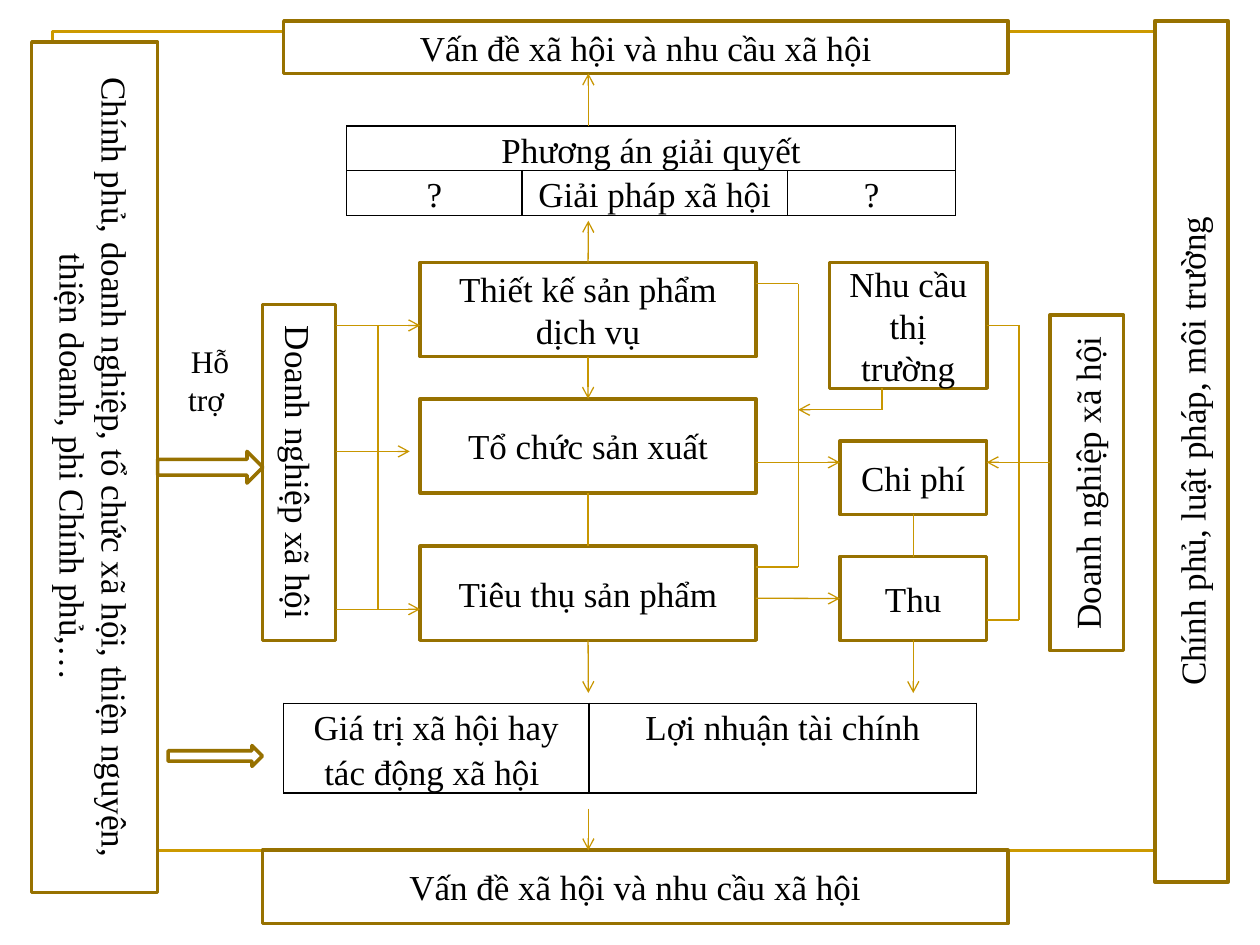
"""Build the slide on how social enterprises turn social needs into value."""
from lxml import etree
from pptx import Presentation
from pptx import util as u
from pptx.dml.color import RGBColor
from pptx.enum import shapes, text
from pptx.oxml.ns import qn

FONT = "Times New Roman"
BLACK, WHITE, BORDER, FLOW, FRAME = "000000", "FFFFFF", "977100", "C89600", "CC9900"
TOP, LEFT, BOTTOM, RIGHT = range(4)
RECTANGLE = shapes.MSO_SHAPE.RECTANGLE
PROCESS = shapes.MSO_SHAPE.FLOWCHART_PROCESS

NEEDS = "Vấn đề xã hội và nhu cầu xã hội"
ENTERPRISE = "Doanh nghiệp xã hội"
SUPPORTERS = ("Chính phủ, doanh nghiệp, tổ chức xã hội, thiện nguyện, "
              "thiện doanh, phi Chính phủ,…")
BOXES = {
    "needs": (NEEDS, (5.72, 0.42, 14.6, 1.06), RECTANGLE, "horz"),
    "design": ("Thiết kế sản phẩm dịch vụ", (8.47, 5.29, 6.77, 1.9), RECTANGLE, "horz"),
    "production": ("Tổ chức sản xuất", (8.47, 8.04, 6.77, 1.9), RECTANGLE, "horz"),
    "sales": ("Tiêu thụ sản phẩm", (8.47, 11.01, 6.77, 1.9), RECTANGLE, "horz"),
    "market": ("Nhu cầu thị trường", (16.72, 5.29, 3.18, 2.54), RECTANGLE, "horz"),
    "cost": ("Chi phí", (16.93, 8.89, 2.96, 1.48), PROCESS, "horz"),
    "revenue": ("Thu", (16.93, 11.22, 2.96, 1.69), PROCESS, "horz"),
    "outcome": (NEEDS, (5.29, 17.14, 15.03, 1.48), PROCESS, "horz"),
    "supporters": (SUPPORTERS, (0.64, 0.85, 2.54, 17.14), RECTANGLE, "vert"),
    "enterprise left": (ENTERPRISE, (5.29, 6.14, 1.48, 6.77), RECTANGLE, "vert"),
    "enterprise right": (ENTERPRISE, (21.17, 6.35, 1.48, 6.77), RECTANGLE, "vert270"),
    "law": ("Chính phủ, luật pháp, môi trường", (23.28, 0.42, 1.48, 17.36),
            RECTANGLE, "vert270"),
}
BLOCK_ARROWS = [(3.18, 9.1, 2.12, 0.64), (3.39, 15.03, 1.9, 0.42)]
TABLES = [
    ((6.99, 2.54), (3.53, 5.36, 3.38), 0.9,
     [("Phương án giải quyết", "", ""), ("?", "Giải pháp xã hội", "?")]),
    ((5.72, 14.18), (6.15, 7.82), 1.81,
     [("Giá trị xã hội hay tác động xã hội ", "Lợi nhuận tài chính")]),
]
ARROWS = [
    ((11.86, 2.54), (11.86, 1.48)),
    (("design", TOP), (11.86, 4.45)),
    (("design", BOTTOM), ("production", TOP)),
    (("sales", BOTTOM), (11.86, 13.97)),
    (("revenue", BOTTOM), (18.41, 13.97)),
    ((11.86, 16.3), (11.86, 17.14)),
    ((6.77, 6.56), (8.47, 6.56)),
    ((6.77, 9.1), (8.26, 9.1)),
    ((6.77, 12.28), (8.47, 12.28)),
    ((15.24, 9.32), (16.93, 9.32)),
    ((15.24, 12.06), ("revenue", LEFT)),
    ((17.78, 8.26), (16.09, 8.26)),
    ((21.17, 9.32), (19.89, 9.32)),
]
LINES = [
    (("production", BOTTOM), ("sales", TOP)),
    (("cost", BOTTOM), ("revenue", TOP)),
    ((7.62, 6.56), (7.62, 12.28)),
    ((15.24, 5.72), (16.09, 5.72)),
    ((16.09, 5.72), (16.09, 11.43)),
    ((16.09, 11.43), (15.24, 11.43)),
    ((17.78, 8.26), (17.78, 7.83)),
    ((19.89, 6.56), (20.54, 6.56)),
    ((20.54, 6.56), (20.54, 12.5)),
    ((20.54, 12.5), (19.89, 12.5)),
]


def color(value):
    return RGBColor.from_string(value)


def cm(values):
    return [u.Cm(value) for value in values]


def write(frame, words, size=20, spacing=None):
    frame.word_wrap = True
    paragraph = frame.paragraphs[0]
    paragraph.text = words
    paragraph.alignment = text.PP_ALIGN.CENTER
    paragraph.line_spacing = spacing
    paragraph.font.name = FONT
    paragraph.font.size = u.Pt(size)
    paragraph.font.color.rgb = color(BLACK)


def set_line(shape, value, width):
    shape.line.color.rgb = color(value)
    shape.line.width = u.Pt(width)


def add_box(slide, kind, place):
    shape = slide.shapes.add_shape(kind, *cm(place))
    shape.shadow.inherit = False
    shape.fill.solid()
    shape.fill.fore_color.rgb = color(WHITE)
    set_line(shape, BORDER, 2)
    return shape


def add_line(slide, boxes, start, end, value=FLOW, width=0.75, arrow=False):
    points = [(0, 0) if isinstance(stop[0], str) else cm(stop) for stop in (start, end)]
    line = slide.shapes.add_connector(shapes.MSO_CONNECTOR.STRAIGHT, *points[0], *points[1])
    for stop, connect in ((start, line.begin_connect), (end, line.end_connect)):
        if isinstance(stop[0], str):
            connect(boxes[stop[0]], stop[1])
    set_line(line, value, width)
    if arrow:
        etree.SubElement(line.line._get_or_add_ln(), qn("a:tailEnd"), type="arrow")
    etree.SubElement(line._element.spPr, qn("a:effectLst"))


def add_borders(cell):
    properties = cell._tc.get_or_add_tcPr()
    for position, side in enumerate(("lnL", "lnR", "lnT", "lnB")):
        border = etree.Element(qn("a:" + side), w=str(u.Pt(1)))
        fill = etree.SubElement(border, qn("a:solidFill"))
        etree.SubElement(fill, qn("a:srgbClr"), val=BLACK)
        properties.insert(position, border)


def add_table(slide, corner, widths, height, rows):
    size = cm((sum(widths), height * len(rows)))
    table = slide.shapes.add_table(len(rows), len(widths), *cm(corner), *size).table
    for column, width in zip(table.columns, widths):
        column.width = u.Cm(width)
    for r, row in enumerate(rows):
        table.rows[r].height = u.Cm(height)
        for c, words in enumerate(row):
            cell = table.cell(r, c)
            cell.margin_left = cell.margin_right = u.Cm(0.18)
            cell.margin_top = cell.margin_bottom = 0
            cell.fill.solid()
            cell.fill.fore_color.rgb = color(WHITE)
            add_borders(cell)
            write(cell.text_frame, words, spacing=1.15)
        if "" in row:
            table.cell(r, 0).merge(table.cell(r, len(row) - 1))


def add_frame(slide):
    builder = slide.shapes.build_freeform(*cm((1.06, 2.33)))
    builder.add_line_segments([cm((1.06, 0.64)), cm((23.92, 0.64))], close=False)
    corner = builder.convert_to_shape()
    corner.shadow.inherit = False
    corner.fill.background()
    set_line(corner, FRAME, 1.5)
    add_line(slide, {}, (1.27, 17.14), (24.13, 17.14), FRAME, 1.5)


def main():
    presentation = Presentation()
    presentation.slide_width, presentation.slide_height = cm((25.4, 19.05))
    slide = presentation.slides.add_slide(presentation.slide_layouts[6])
    add_frame(slide)
    boxes = {}
    for name, (words, place, kind, direction) in BOXES.items():
        boxes[name] = shape = add_box(slide, kind, place)
        shape.text_frame.vertical_anchor = text.MSO_ANCHOR.MIDDLE
        shape.text_frame._txBody.bodyPr.set("vert", direction)
        write(shape.text_frame, words)
    for place in BLOCK_ARROWS:
        add_box(slide, shapes.MSO_SHAPE.RIGHT_ARROW, place)
    for table in TABLES:
        add_table(slide, *table)
    for start, end in ARROWS:
        add_line(slide, boxes, start, end, arrow=True)
    for start, end in LINES:
        add_line(slide, boxes, start, end)
    support = slide.shapes.add_textbox(*cm((3.39, 6.77, 1.69, 1.8)))
    write(support.text_frame, "Hỗ trợ ", size=18)
    support.text_frame.auto_size = text.MSO_AUTO_SIZE.SHAPE_TO_FIT_TEXT
    presentation.save("out.pptx")


if __name__ == "__main__":
    main()
